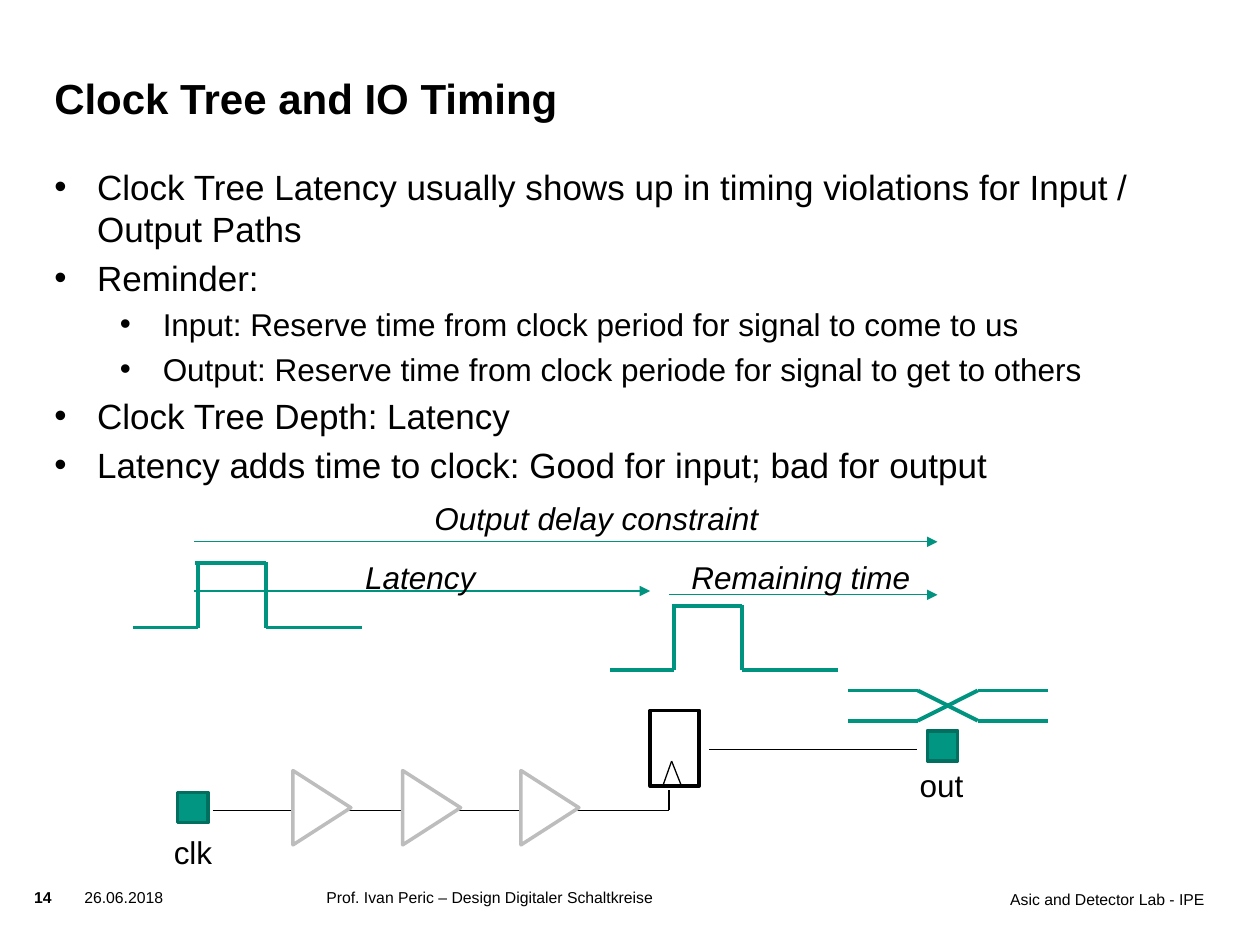
import pptx
import pptx.util
import pptx.dml.color
import pptx.enum.shapes
import pptx.enum.text
import pptx.oxml.xmlchemy

Pt = pptx.util.Pt
SHAPES = pptx.enum.shapes.MSO_SHAPE
ALIGN = pptx.enum.text.PP_ALIGN
ANCHOR = pptx.enum.text.MSO_ANCHOR
FIT = pptx.enum.text.MSO_AUTO_SIZE

COLORS = {"black": "000000", "white": "FFFFFF", "signal": "00937F",
          "pad": "009682", "pad_edge": "006F60", "buffer": "BDBDBD"}
FONT = "Arial"

HEADING = "Clock Tree and IO Timing"
BULLETS = [
    (0, "Clock Tree Latency usually shows up in timing violations for Input / Output Paths"),
    (0, "Reminder:"),
    (1, "Input: Reserve time from clock period for signal to come to us"),
    (1, "Output: Reserve time from clock periode for signal to get to others"),
    (0, "Clock Tree Depth: Latency"),
    (0, "Latency adds time to clock: Good for input; bad for output"),
]
LEVELS = [{"size": 20, "margin": 24.5}, {"size": 18, "margin": 62}]
HANGING = 24.5

FOOTERS = [
    ("Asic and Detector Lab - IPE", (473, 508.5, 215.3, 28), ALIGN.RIGHT, False),
    ("14", (19.5, 507.5, 26, 17.3), ALIGN.LEFT, True),
    ("26.06.2018", (48.2, 507.5, 67.7, 28), ALIGN.LEFT, False),
    ("Prof. Ivan Peric – Design Digitaler Schaltkreise", (186.5, 507.5, 215.3, 28), ALIGN.LEFT, False),
]
LABELS = [
    ("clk", (92.2, 472.3, 36.7, 29), False),
    ("out", (518.4, 434.2, 39.6, 29), False),
    ("Output delay constraint", (241.2, 281.5, 201.6, 29), True),
    ("Remaining time", (388, 315.4, 141, 29), True),
    ("Latency", (201.6, 315.4, 78.5, 29), True),
]
PADS = [(101.5, 452.9), (530, 417.6)]
PAD_SIZE = 17.3
BUFFER_LEFTS = [162.7, 225.4, 293]
BUFFER_TOP, BUFFER_WIDTH, BUFFER_HEIGHT = 445, 42.5, 33.1
CLOCK_WIRE = (121.7, 463, 382.3, 463)
WIRES = [(405.4, 428.4, 524.2, 428.4), (382.3, 463, 382.3, 451.4)]
REGISTER = (371.5, 406, 28.1, 43.2)
REGISTER_CLOCK = [(389.5, 449.3, 383.8, 434.9), (378.7, 449.3, 383.8, 434.9)]
PULSE_ORIGINS = [(76.3, 358.6), (348.5, 383)]
PULSE = [(0, 0, 36.7, 0), (36.7, 0, 36.7, -37.4), (35.3, -36.7, 75.6, -36.7),
         (75.6, 0, 75.6, -37.4), (75.6, 0, 130.3, 0)]
DATA_XS = (484.6, 524.5, 558.7, 599)
DATA_HIGH, DATA_LOW = 394.6, 411.8
SPANS = [(110.9, 309.6, 535.7), (382.3, 339.9, 535.7), (110.9, 337.7, 371.5)]


def color(name):
    return pptx.dml.color.RGBColor.from_string(COLORS[name])


def xml_child(parent, tag, **attributes):
    element = pptx.oxml.xmlchemy.OxmlElement(tag)
    for key, value in attributes.items():
        element.set(key, value)
    parent.append(element)


def style(paragraph, size, bold=False, italic=False):
    for run in paragraph.runs:
        run.font.name = FONT
        run.font.size = Pt(size)
        run.font.bold = bold
        run.font.italic = italic
        run.font.color.rgb = color("black")


def place(shape, box):
    shape.left, shape.top, shape.width, shape.height = map(Pt, box)


def trim(frame):
    frame.margin_left = frame.margin_right = frame.margin_top = frame.margin_bottom = 0
    frame.word_wrap = True
    frame.auto_size = FIT.NONE


def add_line(shapes, ends, line_color="black", width=0.75, arrow=False):
    line = shapes.add_connector(pptx.enum.shapes.MSO_CONNECTOR.STRAIGHT, *map(Pt, ends))
    line.line.color.rgb = color(line_color)
    line.line.width = Pt(width)
    if arrow:
        xml_child(line.line._get_or_add_ln(), "a:tailEnd", type="triangle")
    xml_child(line._element.spPr, "a:effectLst")


def add_block(shapes, kind, box, fill, edge):
    block = shapes.add_shape(kind, *map(Pt, box))
    block.shadow.inherit = False
    block.fill.solid()
    block.fill.fore_color.rgb = color(fill)
    block.line.color.rgb = color(edge)
    block.line.width = Pt(2)
    return block


def add_texts(slide):
    title = slide.shapes.title
    place(title, (31, 26, 544.3, 44))
    trim(title.text_frame)
    title.text_frame.vertical_anchor = ANCHOR.BOTTOM
    title.text_frame.text = HEADING
    title.text_frame.paragraphs[0].alignment = ALIGN.LEFT
    style(title.text_frame.paragraphs[0], 24, bold=True)

    body = slide.placeholders[1]
    place(body, (31, 94.3, 658, 170))
    trim(body.text_frame)
    body.text_frame.text = "\n".join(text for _, text in BULLETS)
    for index, (level, _) in enumerate(BULLETS):
        paragraph = body.text_frame.paragraphs[index]
        paragraph.level = level
        paragraph.space_before = Pt(4 if index else 0)
        properties = paragraph._p.get_or_add_pPr()
        properties.set("marL", str(int(Pt(LEVELS[level]["margin"]))))
        properties.set("indent", str(-int(Pt(HANGING))))
        xml_child(properties, "a:buFont", typeface=FONT)
        xml_child(properties, "a:buChar", char="•")
        style(paragraph, LEVELS[level]["size"])

    for text, box, alignment, bold in FOOTERS:
        footer = slide.shapes.add_textbox(*map(Pt, box)).text_frame
        trim(footer)
        footer.text = text
        footer.paragraphs[0].alignment = alignment
        style(footer.paragraphs[0], 9, bold=bold)


def add_circuit(shapes):
    add_line(shapes, CLOCK_WIRE)
    for left, top in PADS:
        add_block(shapes, SHAPES.RECTANGLE, (left, top, PAD_SIZE, PAD_SIZE), "pad", "pad_edge")
    for left in BUFFER_LEFTS:
        buffer = add_block(shapes, SHAPES.ISOSCELES_TRIANGLE,
                           (left, BUFFER_TOP, BUFFER_WIDTH, BUFFER_HEIGHT), "white", "buffer")
        buffer.rotation = 90
    register = shapes.add_group_shape().shapes
    add_block(register, SHAPES.RECTANGLE, REGISTER, "white", "black")
    for ends in REGISTER_CLOCK:
        add_line(register, ends)
    for ends in WIRES:
        add_line(shapes, ends)


def add_waveforms(shapes):
    for x, y in PULSE_ORIGINS:
        pulse = shapes.add_group_shape().shapes
        for x1, y1, x2, y2 in PULSE:
            add_line(pulse, (x + x1, y + y1, x + x2, y + y2), "signal", 2.25)
    start, cross, settle, end = DATA_XS
    for before, after in ((DATA_HIGH, DATA_LOW), (DATA_LOW, DATA_HIGH)):
        add_line(shapes, (start, before, cross, before), "signal", 2.25)
        add_line(shapes, (cross, before, settle, after), "signal", 2.25)
        add_line(shapes, (settle, after, end, after), "signal", 2.25)
    for left, y, right in SPANS:
        add_line(shapes, (left, y, right, y), "signal", arrow=True)


def add_labels(shapes):
    for text, box, italic in LABELS:
        label = shapes.add_textbox(*map(Pt, box)).text_frame
        label.word_wrap = False
        label.auto_size = FIT.SHAPE_TO_FIT_TEXT
        label.text = text
        style(label.paragraphs[0], 18, italic=italic)


def main():
    deck = pptx.Presentation()
    deck.slide_width, deck.slide_height = Pt(720), Pt(540)
    slide = deck.slides.add_slide(deck.slide_layouts[1])
    add_texts(slide)
    add_circuit(slide.shapes)
    add_waveforms(slide.shapes)
    add_labels(slide.shapes)
    deck.save("out.pptx")


if __name__ == "__main__":
    main()
